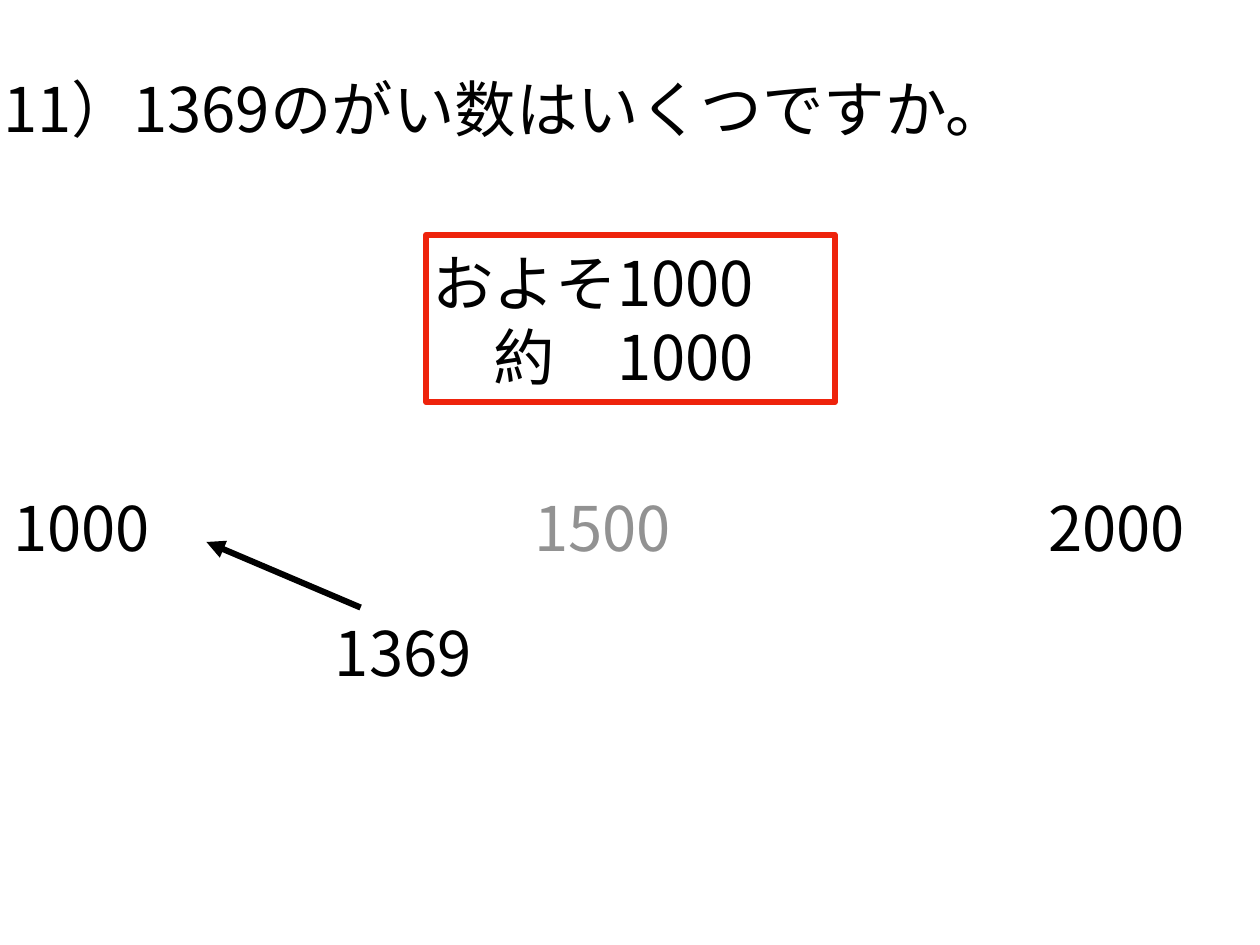
"""Build a maths slide that rounds 1369 to the nearest thousand."""
from lxml.etree import SubElement
from pptx import Presentation
from pptx.dml.color import RGBColor
from pptx.enum.shapes import MSO_CONNECTOR as CONN, MSO_SHAPE as SHAPE
from pptx.enum.text import MSO_ANCHOR as ANCHOR, MSO_AUTO_SIZE as AUTO
from pptx.oxml.ns import qn
from pptx.util import Inches, Pt

FONT = "Noto Sans CJK JP"
BLACK, GREY, RED, WHITE = "000000", "929292", "EE230C", "FFFFFF"


def rgb(value):
    return RGBColor.from_string(value)


def add_text(lines, x, y, w, h, color=BLACK):
    sp = s.shapes.add_textbox(*map(Inches, (x, y, w, h)))
    tf = sp.text_frame
    tf.word_wrap = True
    tf.auto_size = AUTO.SHAPE_TO_FIT_TEXT
    tf.vertical_anchor = ANCHOR.MIDDLE
    tf.margin_left = tf.margin_right = tf.margin_top = tf.margin_bottom = Inches(0.06)
    tf.text = lines
    for p in tf.paragraphs:
        for r in p.runs:
            r.font.size = Pt(50)
            r.font.name = FONT
            r.font.color.rgb = rgb(color)
            SubElement(r.font._element, qn("a:ea")).set("typeface", FONT)
    return sp


prs = Presentation()
prs.slide_width, prs.slide_height = Inches(14.22), Inches(10.67)
s = prs.slides.add_slide(prs.slide_layouts[6])

title = add_text("11）1369のがい数はいくつですか。", -0.02, 0.97, 12.37, 0.81)
title.fill.solid()
title.fill.fore_color.rgb = rgb(WHITE)
title.text_frame.paragraphs[0].line_spacing = 0.5

SCALE_Y, NUMBER_W, NUMBER_H = 5.54, 2.27, 0.81
for number, x, y, color in [
    ("1000", 0.09, SCALE_Y, BLACK),
    ("1500", 5.97, SCALE_Y, GREY),
    ("2000", 11.77, SCALE_Y, BLACK),
    ("1369", 3.72, 6.96, BLACK),
]:
    add_text(number, x, y, NUMBER_W, NUMBER_H, color)

arrow = s.shapes.add_connector(CONN.STRAIGHT, *map(Inches, (4.07, 6.86, 2.33, 6.12)))
arrow.line.color.rgb = rgb(BLACK)
arrow.line.width = Pt(5)
SubElement(arrow.line._get_or_add_ln(), qn("a:tailEnd")).set("type", "triangle")
SubElement(arrow._element.spPr, qn("a:effectLst"))

add_text("およそ1000\n　約　1000", 4.82, 2.7, 4.38, 1.8)
frame = s.shapes.add_shape(SHAPE.RECTANGLE, *map(Inches, (4.81, 2.65, 4.61, 1.89)))
frame.shadow.inherit = False
frame.fill.background()
frame.line.color.rgb = rgb(RED)
frame.line.width = Pt(5)

prs.save("out.pptx")
